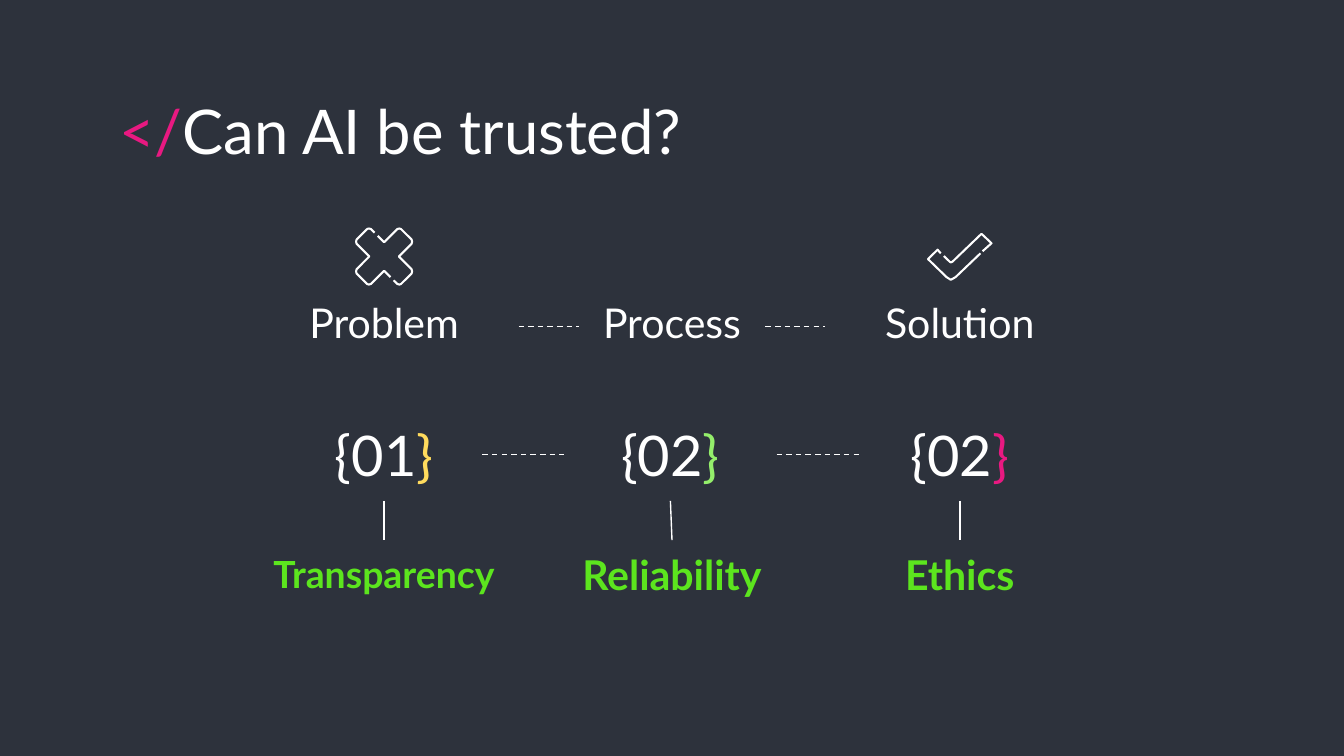
from dataclasses import dataclass
from itertools import pairwise

from lxml.etree import SubElement
from pptx import Presentation
from pptx.dml.color import RGBColor
from pptx.enum.dml import MSO_LINE
from pptx.enum.shapes import MSO_CONNECTOR
from pptx.enum.text import MSO_ANCHOR, MSO_AUTO_SIZE, PP_ALIGN
from pptx.oxml.ns import qn
from pptx.util import Cm, Pt


@dataclass(frozen=True)
class Theme:
    font: str = "Lato"
    background: str = "2D323C"
    white: str = "FFFFFF"
    pink: str = "E81981"
    yellow: str = "FFDB5D"
    mint: str = "94EE6B"
    green: str = "5CE51E"
    title_size: int = 33
    number_size: int = 30
    heading_size: int = 22
    long_label_size: int = 20
    rule_width: float = 0.75
    icon_width: float = 1.1


THEME = Theme()

TITLE = [("</", THEME.pink), ("Can AI be trusted?", THEME.white)]
STAGES = [("Problem", 7.26, 5.08), ("Process", 12.7, 3.53), ("Solution", 18.14, 5.08)]
NUMBERS = [
    ("{01", THEME.yellow, 7.26, 3.71),
    ("{02", THEME.mint, 12.67, 4.01),
    ("{02", THEME.pink, 18.14, 3.71),
]
PRINCIPLES = [
    ("Transparency", 7.26, THEME.long_label_size),
    ("Reliability", 12.7, THEME.heading_size),
    ("Ethics", 18.14, THEME.heading_size),
]

CROSS_HALF = [
    (-0.12, -0.39), (0, -0.27), (0.25, -0.52), (0.29, -0.53), (0.32, -0.52),
    (0.52, -0.32), (0.53, -0.28), (0.52, -0.24), (0.28, 0), (0.52, 0.24),
    (0.53, 0.28), (0.52, 0.32), (0.32, 0.52), (0.29, 0.53), (0.25, 0.52),
    (0.18, 0.45),
]
CROSS = [CROSS_HALF, [(-x, -y) for x, y in CROSS_HALF]]
CHECK = [
    [(-0.36, -0.06), (-0.42, -0.13), (-0.6, 0.05), (-0.25, 0.39),
     (-0.17, 0.44), (-0.08, 0.39), (0.39, -0.06)],
    [(-0.3, -0.01), (-0.19, 0.1), (-0.17, 0.11), (-0.14, 0.1),
     (0.41, -0.43), (0.6, -0.25), (0.43, -0.1)],
]

ICON_Y = 4.85
STAGE_TOP, LABEL_HEIGHT = 5.54, 1.27
NUMBER_TOP, NUMBER_HEIGHT = 7.72, 1.75
PRINCIPLE_TOP, PRINCIPLE_WIDTH = 10.21, 5.08


def write(frame, runs, *, size, bold=False, align=PP_ALIGN.CENTER, anchor=MSO_ANCHOR.BOTTOM):
    frame.word_wrap = True
    frame.auto_size = MSO_AUTO_SIZE.NONE
    frame.vertical_anchor = anchor
    frame.margin_left = frame.margin_right = Cm(0.25)
    frame.margin_top = frame.margin_bottom = Cm(0.25)
    paragraph = frame.paragraphs[0]
    paragraph.alignment = align
    for text, color in runs:
        run = paragraph.add_run()
        run.text = text
        run.font.name = THEME.font
        run.font.size = Pt(size)
        run.font.bold = bold
        run.font.color.rgb = RGBColor.from_string(color)


def centered_box(slide, center, top, width, height):
    box = slide.shapes.add_textbox(Cm(center - width / 2), Cm(top), Cm(width), Cm(height))
    return box.text_frame


def rule(slide, start, end, dash=None):
    line = slide.shapes.add_connector(
        MSO_CONNECTOR.STRAIGHT, *(Cm(value) for value in (*start, *end))
    )
    line.line.color.rgb = RGBColor.from_string(THEME.white)
    line.line.width = Pt(THEME.rule_width)
    line.line.dash_style = dash
    SubElement(line._element.spPr, qn("a:effectLst"))


def dashes_between(slide, spans, y):
    for (center, width), (next_center, next_width) in pairwise(spans):
        start, end = center + width / 2, next_center - next_width / 2
        rule(slide, (start, y), (end, y), dash=MSO_LINE.DASH)


def icon(slide, strokes, center):
    for stroke in strokes:
        points = [(Cm(center + x), Cm(ICON_Y + y)) for x, y in stroke]
        builder = slide.shapes.build_freeform(*points[0])
        builder.add_line_segments(points[1:], close=False)
        outline = builder.convert_to_shape()
        outline.shadow.inherit = False
        outline.fill.background()
        outline.line.color.rgb = RGBColor.from_string(THEME.white)
        outline.line.width = Pt(THEME.icon_width)


def main():
    deck = Presentation()
    deck.slide_width, deck.slide_height = Cm(25.4), Cm(14.29)
    slide = deck.slides.add_slide(deck.slide_layouts[5])
    slide.background.fill.solid()
    slide.background.fill.fore_color.rgb = RGBColor.from_string(THEME.background)

    title = slide.shapes.title
    title.left, title.top, title.width, title.height = Cm(2), Cm(1.5), Cm(21.4), Cm(1.6)
    write(title.text_frame, TITLE, size=THEME.title_size,
          align=PP_ALIGN.LEFT, anchor=MSO_ANCHOR.TOP)

    icon(slide, CROSS, STAGES[0][1])
    icon(slide, CHECK, STAGES[-1][1])

    for stage, center, width in STAGES:
        write(centered_box(slide, center, STAGE_TOP, width, LABEL_HEIGHT),
              [(stage, THEME.white)], size=THEME.heading_size)
    dashes_between(slide, [stage[1:] for stage in STAGES], STAGE_TOP + LABEL_HEIGHT / 2)

    for number, brace_color, center, width in NUMBERS:
        write(centered_box(slide, center, NUMBER_TOP, width, NUMBER_HEIGHT),
              [(number, THEME.white), ("}", brace_color)], size=THEME.number_size)
    dashes_between(slide, [number[2:] for number in NUMBERS], NUMBER_TOP + NUMBER_HEIGHT / 2)

    for (principle, center, size), number in zip(PRINCIPLES, NUMBERS):
        write(centered_box(slide, center, PRINCIPLE_TOP, PRINCIPLE_WIDTH, LABEL_HEIGHT),
              [(principle, THEME.green)], size=size, bold=True, anchor=MSO_ANCHOR.MIDDLE)
        rule(slide, (number[2], NUMBER_TOP + NUMBER_HEIGHT), (center, PRINCIPLE_TOP))

    deck.save("out.pptx")


if __name__ == "__main__":
    main()
